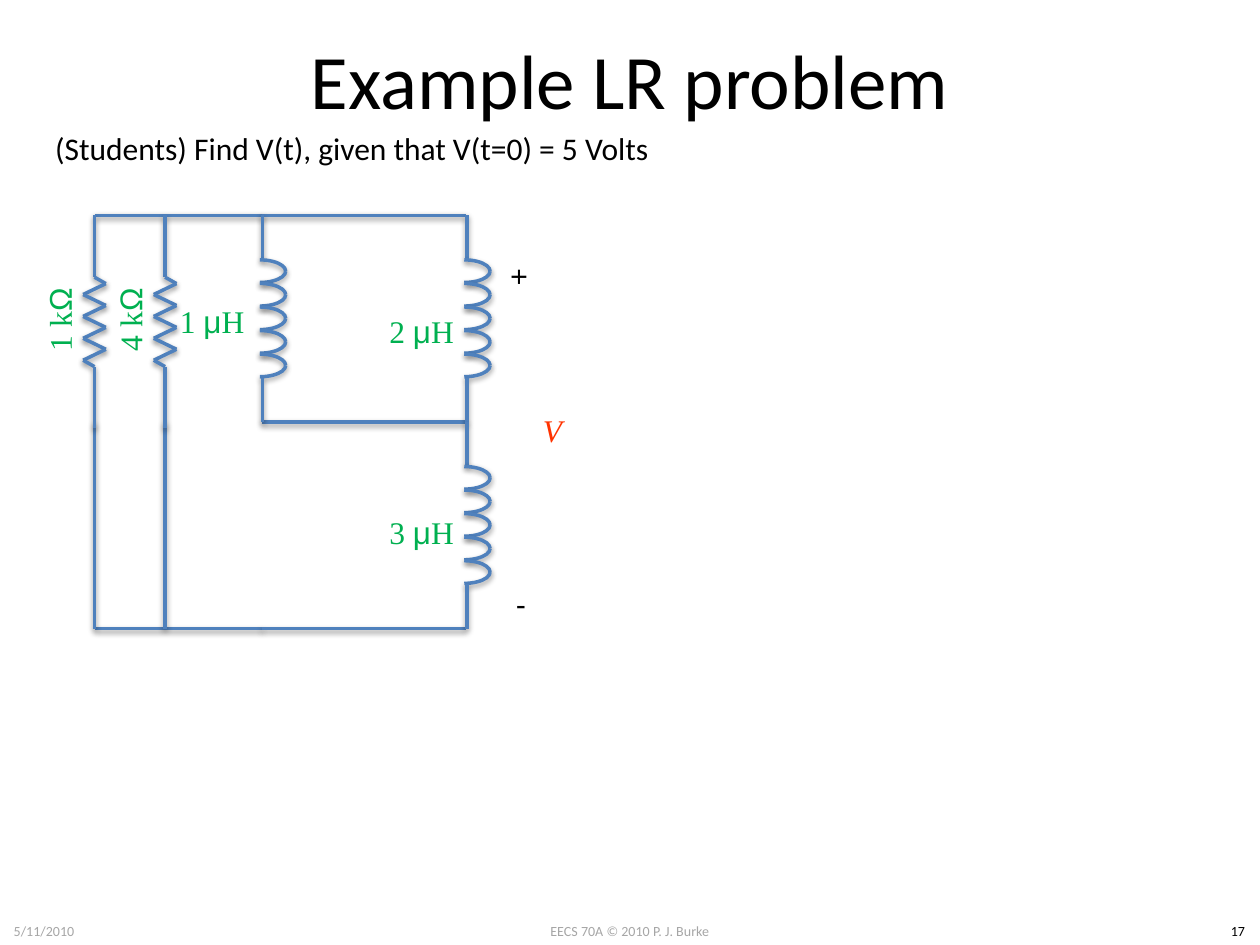
from dataclasses import dataclass
from itertools import pairwise

from lxml.etree import SubElement
from pptx import Presentation
from pptx.dml.color import RGBColor
from pptx.enum.shapes import MSO_CONNECTOR, MSO_SHAPE
from pptx.enum.text import MSO_ANCHOR, MSO_AUTO_SIZE, PP_ALIGN
from pptx.oxml.ns import qn
from pptx.util import Inches, Pt


@dataclass(frozen=True)
class Theme:
    ink: str = "000000"
    muted: str = "A6A6A6"
    wire: str = "4F81BD"
    value: str = "00B050"
    voltage: str = "FF3300"
    body_font: str = "Calibri"
    label_font: str = "Times New Roman"
    symbol_font: str = "Arial"
    title_size: int = 44
    body_size: int = 18
    footer_size: int = 8
    wire_width: int = 2


@dataclass(frozen=True)
class Box:
    left: float
    top: float
    width: float
    height: float

    def x(self, share):
        return self.left + share * self.width

    def y(self, share):
        return self.top + share * self.height

    def region(self, left, top, width, height):
        return Box(self.x(left), self.y(top), width * self.width, height * self.height)

    def inches(self):
        return [Inches(length) for length in (self.left, self.top, self.width, self.height)]


THEME = Theme()
SLIDE = Box(0, 0, 10, 7.5)
LABEL_WIDTH, LABEL_HEIGHT = 1.19, 0.73


def centred_box(x, y, width, height):
    return Box(x - width / 2, y - height / 2, width, height)


def add_span(para, text, size=THEME.body_size, font=THEME.body_font, color=THEME.ink, italic=None):
    span = para.add_run()
    span.text = text
    span.font.size = Pt(size)
    span.font.name = font
    span.font.italic = italic
    span.font.color.rgb = RGBColor.from_string(color)


def add_text(shapes, box, spans, align=PP_ALIGN.LEFT, middle=False, wrap=True, rotation=0):
    shape = shapes.add_textbox(*box.inches())
    shape.rotation = rotation
    frame = shape.text_frame
    frame.word_wrap = wrap
    if middle:
        frame.vertical_anchor = MSO_ANCHOR.MIDDLE
    else:
        frame.auto_size = MSO_AUTO_SIZE.SHAPE_TO_FIT_TEXT
    para = frame.paragraphs[0]
    para.alignment = align
    for text, style in spans:
        add_span(para, text, **style)


def style_wire(shape):
    shape.line.color.rgb = RGBColor.from_string(THEME.wire)
    shape.line.width = Pt(THEME.wire_width)
    effects = SubElement(shape._element.spPr, qn("a:effectLst"))
    shadow = SubElement(effects, qn("a:outerShdw"), blurRad="40000", dist="20000",
                        dir="5400000", rotWithShape="0")
    color = SubElement(shadow, qn("a:srgbClr"), val=THEME.ink)
    SubElement(color, qn("a:alpha"), val="38000")


def add_wire(shapes, start, end):
    ends = [Inches(length) for length in (*start, *end)]
    style_wire(shapes.add_connector(MSO_CONNECTOR.STRAIGHT, *ends))


def add_arc(shapes, box, flipped):
    arc = shapes.add_shape(MSO_SHAPE.ARC, *box.inches())
    arc.fill.background()
    style_wire(arc)
    if flipped:
        arc._element.spPr.find(qn("a:xfrm")).set("flipV", "1")


def add_label(shapes, x, y, spans, rotation=0):
    box = centred_box(x, y, LABEL_WIDTH, LABEL_HEIGHT)
    styled = [(text, dict(font=font, color=THEME.value)) for text, font in spans]
    add_text(shapes, box, styled, PP_ALIGN.CENTER, middle=True, rotation=rotation)


def add_resistor(page, box, amount):
    shapes = page.shapes.add_group_shape().shapes
    middle = box.x(0.5)
    first, last, bends = 0.32, 0.68, 8
    step = (last - first) / (bends - 1)
    zigzag = [(box.x((bend + 1) % 2), box.y(first + bend * step)) for bend in range(bends)]
    points = [(middle, box.y(0)), (middle, box.y(0.29)), *zigzag,
              (middle, box.y(0.71)), (middle, box.y(1))]
    add_label(shapes, middle - 0.28, box.y(0.49),
              [(f"{amount} k", THEME.label_font), ("Ω", THEME.symbol_font)], rotation=270)
    for start, end in pairwise(points):
        add_wire(shapes, start, end)


def add_inductor(page, box, amount, label_x, label_y):
    shapes = page.shapes.add_group_shape().shapes
    middle = box.x(0.55)
    lead, turns = 0.215, 5
    pitch = (1 - 2 * lead) / turns
    add_wire(shapes, (middle, box.y(0)), (middle, box.y(lead)))
    for turn in range(turns):
        for flipped in (False, True):
            add_arc(shapes, box.region(0, lead + turn * pitch, 1, 0.11), flipped)
    add_wire(shapes, (middle, box.y(1 - lead)), (middle, box.y(1)))
    add_label(page.shapes, middle + label_x, box.y(label_y),
              [(f"{amount} ", THEME.label_font), ("μ", THEME.symbol_font),
               ("H", THEME.label_font)])


def add_circuit(page, box):
    first, second, third, last = [box.x(share) for share in (0, 0.19, 0.45, 1)]
    top, centre, bottom = [box.y(share) for share in (0, 0.5, 1)]
    wires = [
        ((first, top), (third, top)),
        ((third, top), (last, top)),
        ((third, centre), (last, centre)),
        ((first, bottom), (third, bottom)),
        ((third, bottom), (last, bottom)),
        ((first, centre), (first, bottom)),
        ((second, centre), (second, bottom)),
    ]
    for start, end in wires:
        add_wire(page.shapes, start, end)
    for column, amount in ((first, 1), (second, 4)):
        add_resistor(page, Box(column - 0.09, top, 0.18, 1.69), amount)
    coils = [
        (third, top, 1, -0.4, 0.51),
        (last, top, 2, -0.36, 0.56),
        (last, centre, 3, -0.36, 0.53),
    ]
    for column, row, amount, label_x, label_y in coils:
        coil = Box(column - 0.22, row, 0.41, box.height / 2)
        add_inductor(page, coil, amount, label_x, label_y)


def add_voltage(page, box):
    add_text(page.shapes, centred_box(box.x(0.18), box.y(0.15), 0.33, 0.4), [("+", {})],
             wrap=False, rotation=90)
    add_text(page.shapes, centred_box(box.x(0.5), box.y(0.52), box.width, 0.61),
             [("V", dict(font=THEME.label_font, color=THEME.voltage, italic=True))],
             PP_ALIGN.CENTER, middle=True)
    add_text(page.shapes, centred_box(box.x(0.18), box.y(0.94), 0.28, 0.4), [("-", {})],
             wrap=False)


def add_heading(page, box):
    title = page.shapes.title
    title.left, title.top, title.width, title.height = box.inches()
    title.text_frame.vertical_anchor = MSO_ANCHOR.MIDDLE
    para = title.text_frame.paragraphs[0]
    para.alignment = PP_ALIGN.CENTER
    add_span(para, "Example LR problem", THEME.title_size)
    add_text(page.shapes, Box(0.34, box.y(0.78), 5, 0.4),
             [("(Students) Find V(t), given that V(t=0) = 5 Volts", {})], wrap=False)


def add_footer(page, box):
    entries = [
        (0.38, 0.24, "EECS 70A © 2010 P. J. Burke", THEME.muted),
        (0, 0.07, "5/11/2010", THEME.muted),
        (0.965, 0.035, "17", THEME.ink),
    ]
    for left, width, text, color in entries:
        add_text(page.shapes, box.region(left, 0, width, 1),
                 [(text, dict(size=THEME.footer_size, color=color))], PP_ALIGN.CENTER)


def main():
    deck = Presentation()
    deck.slide_width, deck.slide_height = Inches(SLIDE.width), Inches(SLIDE.height)
    page = deck.slides.add_slide(deck.slide_layouts[5])
    add_footer(page, Box(0, 7.27, SLIDE.width, 0.24))
    add_heading(page, Box(0.5, 0, 9, 1.25))
    circuit = Box(0.75, 1.71, 2.95, 3.28)
    add_circuit(page, circuit)
    add_voltage(page, Box(4, circuit.top, 0.77, circuit.height))
    deck.save("out.pptx")


if __name__ == "__main__":
    main()
